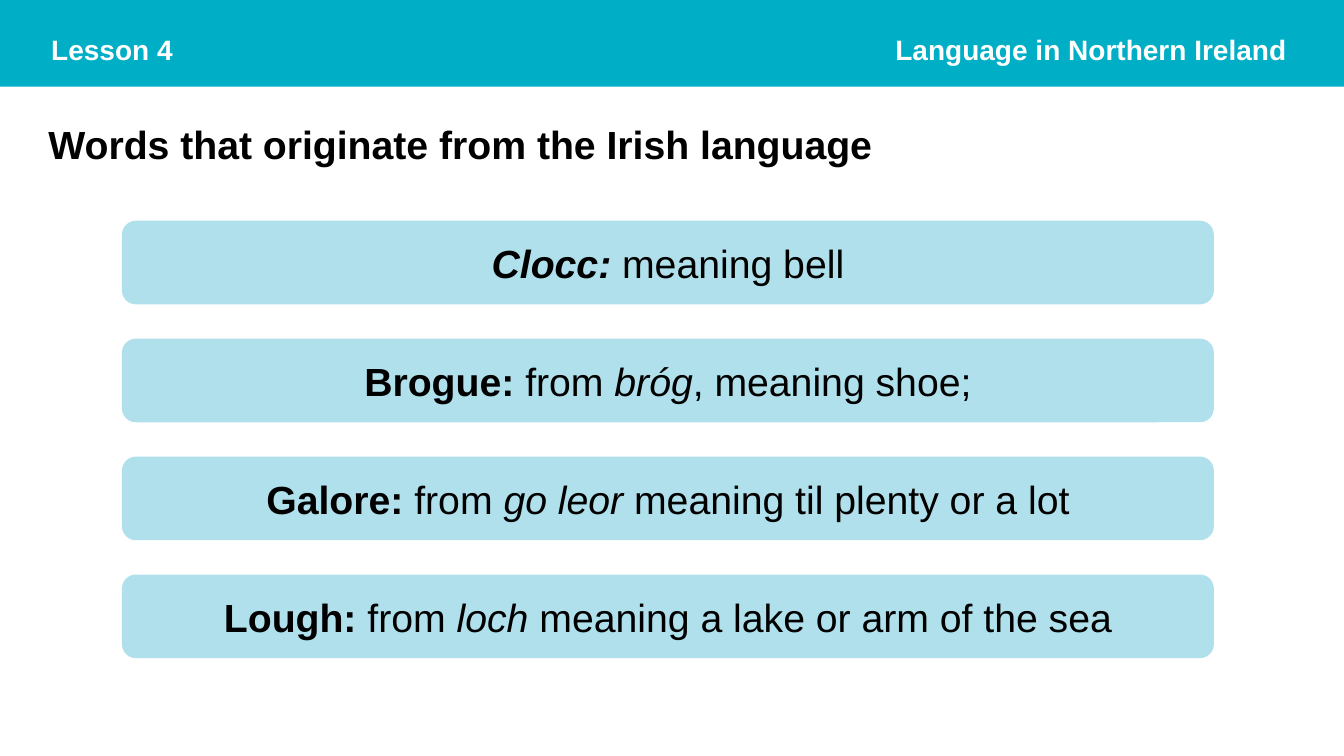
from dataclasses import dataclass

import pptx
import pptx.dml.color
import pptx.enum.shapes
import pptx.enum.text
import pptx.util

PX = 9144  # EMU per px, 100 px to the inch
SLIDE_WIDTH, SLIDE_HEIGHT = 1333, 750
ALIGN = pptx.enum.text.PP_ALIGN
ANCHOR = pptx.enum.text.MSO_ANCHOR
SHAPE = pptx.enum.shapes.MSO_SHAPE


@dataclass(frozen=True)
class Theme:
    font: str = "Arial"
    banner: str = "00AFC5"
    card: str = "AFE0EB"
    ink: str = "000000"
    banner_ink: str = "FFFFFF"
    banner_size: int = 20
    body_size: int = 28


THEME = Theme()

# Each run is its text and its style: b for bold, i for italic.
WORD_ORIGINS = [
    [("Clocc:", "bi"), (" meaning bell", "")],
    [("Brogue: ", "b"), ("from ", ""), ("bróg", "i"), (", meaning shoe;", "")],
    [("Galore: ", "b"), ("from ", ""), ("go leor", "i"),
     (" meaning til plenty or a lot", "")],
    [("Lough: ", "b"), ("from ", ""), ("loch ", "i"),
     ("meaning a lake or arm of the sea", "")],
]


def emu(*lengths):
    return [pptx.util.Emu(length * PX) for length in lengths]


def rgb(colour):
    return pptx.dml.color.RGBColor.from_string(colour)


def write_runs(frame, runs, size, colour, align, anchor):
    frame.word_wrap = True
    frame.auto_size = pptx.enum.text.MSO_AUTO_SIZE.NONE
    frame.vertical_anchor = anchor
    paragraph = frame.paragraphs[0]
    paragraph.alignment = align
    for text, style in runs:
        run = paragraph.add_run()
        run.text = text
        run.font.name = THEME.font
        run.font.size = pptx.util.Pt(size)
        run.font.color.rgb = rgb(colour)
        run.font.bold = "b" in style
        run.font.italic = "i" in style
    return paragraph


def add_block(slide, kind, box, fill):
    block = slide.shapes.add_shape(kind, *emu(*box))
    block.shadow.inherit = False
    block.fill.solid()
    block.fill.fore_color.rgb = rgb(fill)
    block.line.fill.background()
    return block


def add_banner_label(slide, text, box, align):
    label = slide.shapes.add_textbox(*emu(*box))
    write_runs(label.text_frame, [(text, "b")], THEME.banner_size,
               THEME.banner_ink, align, ANCHOR.TOP)


def add_heading(slide, text, box):
    heading = slide.shapes.title
    heading.left, heading.top, heading.width, heading.height = emu(*box)
    paragraph = write_runs(heading.text_frame, [(text, "b")], THEME.body_size,
                           THEME.ink, ALIGN.LEFT, ANCHOR.MIDDLE)
    paragraph.line_spacing = 0.9


def add_word_card(slide, runs, box):
    card = add_block(slide, SHAPE.ROUNDED_RECTANGLE, box, THEME.card)
    write_runs(card.text_frame, runs, THEME.body_size, THEME.ink,
               ALIGN.CENTER, ANCHOR.MIDDLE)


def main():
    deck = pptx.Presentation()
    deck.slide_width, deck.slide_height = emu(SLIDE_WIDTH, SLIDE_HEIGHT)
    slide = deck.slides.add_slide(deck.slide_layouts.get_by_name("Title Only"))

    add_block(slide, SHAPE.RECTANGLE, (0, 0, SLIDE_WIDTH, 86), THEME.banner)
    add_banner_label(slide, "Lesson 4", (41, 27, 173, 44), ALIGN.LEFT)
    add_banner_label(slide, "Language in Northern Ireland",
                     (594, 27, 692, 44), ALIGN.RIGHT)
    add_heading(slide, "Words that originate from the Irish language",
                (38, 111, 1150, 70))

    first_top, pitch = 219, 117
    for row, runs in enumerate(WORD_ORIGINS):
        add_word_card(slide, runs, (121, first_top + row * pitch, 1083, 83))

    deck.save("out.pptx")


if __name__ == "__main__":
    main()
